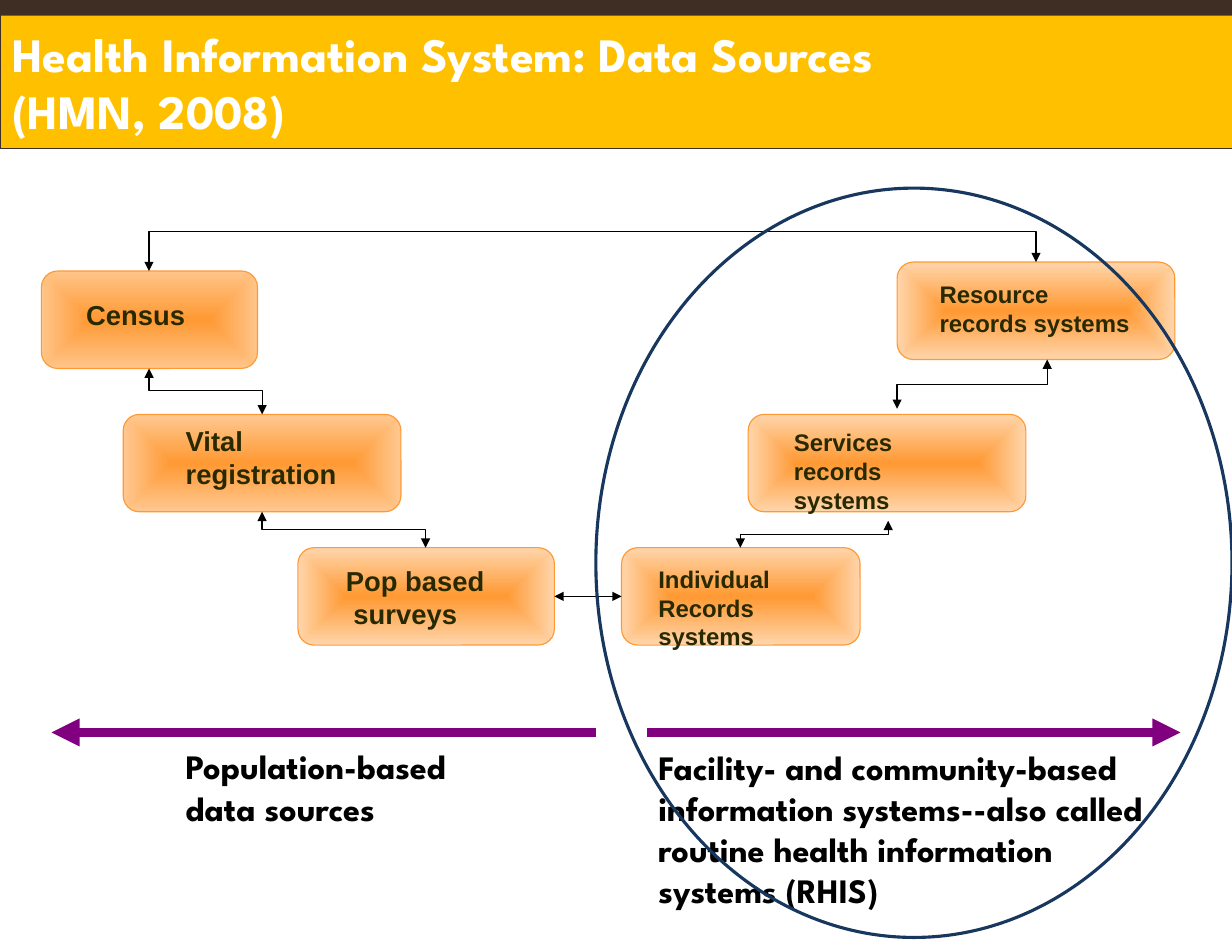
from lxml import etree
from pptx import Presentation
from pptx.dml.color import RGBColor
from pptx.enum.shapes import MSO_CONNECTOR, MSO_SHAPE
from pptx.enum.text import MSO_ANCHOR, MSO_AUTO_SIZE, PP_ALIGN
from pptx.oxml.ns import qn
from pptx.util import Inches, Pt

STRAIGHT, ELBOW = MSO_CONNECTOR.STRAIGHT, MSO_CONNECTOR.ELBOW
RECTANGLE, ROUNDED, OVAL = MSO_SHAPE.RECTANGLE, MSO_SHAPE.ROUNDED_RECTANGLE, MSO_SHAPE.OVAL
MIDDLE, TOP = MSO_ANCHOR.MIDDLE, MSO_ANCHOR.TOP
LEFT, NO_FIT = PP_ALIGN.LEFT, MSO_AUTO_SIZE.NONE

COLORS = {
    "bar": "3F2E24", "title": "FFC000", "white": "FFFFFF", "black": "000000",
    "orange": "FF9933", "peach": "FFD5AB", "apricot": "FFC891", "tan": "FFC58A",
    "label": "292900", "purple": "800080", "navy": "17375E",
}
HEADING_FONT = "League Spartan"
BOX_HEIGHT = 0.87
BOXES = [
    ("resource", (8.01, 2.34), 2.48, "peach", "Resource\nrecords systems", (8.29, 2.45, 1.98, 0.62), 15.4, False),
    ("services", (6.68, 3.7), 2.48, "peach", "Services records systems", (6.99, 3.77, 1.88, 0.88), 15.4, True),
    ("individual", (5.55, 4.89), 2.13, "peach", "Individual\nRecords systems", (5.78, 4.99, 1.74, 0.88), 15.4, True),
    ("surveys", (2.66, 4.89), 2.29, "peach", "Pop based\v surveys", (2.99, 4.99, 1.56, 0.69), 17.6, True),
    ("vital", (1.1, 3.7), 2.48, "apricot", "Vital \vregistration", (1.56, 3.74, 1.57, 0.69), 17.6, True),
    ("census", (0.37, 2.42), 1.93, "tan", "Census", (0.67, 2.61, 1.09, 0.4), 17.6, False),
]
ELBOWS = [
    ((1.33, 3.29), (2.34, 3.7), 3.49),
    ((2.34, 4.57), (3.8, 4.89), 4.73),
    ((7.93, 4.65), (6.61, 4.89), 4.77),
    ((8.01, 3.65), (9.35, 3.21), 3.43),
    ((1.33, 2.42), (9.25, 2.34), 2.07),
]


def color(name):
    return RGBColor.from_string(COLORS[name])


def write(box, text, size, font="Arial", ink="label", wrap=True, anchor=TOP):
    frame = box.text_frame
    frame.text = text
    frame.word_wrap = wrap
    frame.auto_size = NO_FIT
    frame.vertical_anchor = anchor
    for para in frame.paragraphs:
        para.alignment = LEFT
        for span in para.runs:
            span.font.size = Pt(size)
            span.font.name = font
            span.font.bold = True
            span.font.color.rgb = color(ink)


def add_text(shapes, place, text, size, **style):
    box = shapes.add_textbox(*map(Inches, place))
    write(box, text, size, **style)


def add_shape(shapes, kind, place, fill=None, line=None, width=0.75):
    shape = shapes.add_shape(kind, *map(Inches, place))
    shape.shadow.inherit = False
    if fill:
        shape.fill.solid()
        shape.fill.fore_color.rgb = color(fill)
    else:
        shape.fill.background()
    if line:
        shape.line.color.rgb = color(line)
        shape.line.width = Pt(width)
    else:
        shape.line.fill.background()
    return shape


def glow(shape, edge):
    shape.fill.gradient()
    for stop, position, name in zip(shape.fill.gradient_stops, (0, 1), ("orange", edge)):
        stop.position = position
        stop.color.rgb = color(name)
    gradient = shape._element.spPr.find(qn("a:gradFill"))
    gradient.remove(gradient.find(qn("a:lin")))
    route = etree.SubElement(gradient, qn("a:path"), {"path": "shape"})
    etree.SubElement(route, qn("a:fillToRect"), dict.fromkeys("ltrb", "50000"))


def add_source_box(page, corner, width, edge, text, text_place, size, wrap):
    group = page.shapes.add_group_shape()
    box = add_shape(group.shapes, ROUNDED, (*corner, width, BOX_HEIGHT), line="orange")
    glow(box, edge)
    add_text(group.shapes, text_place, text, size, wrap=wrap)
    return box


def add_line(page, start, end, ink="black", width=0.75, kind=STRAIGHT, ends=("headEnd", "tailEnd")):
    line = page.shapes.add_connector(kind, *map(Inches, (*start, *end)))
    line.line.color.rgb = color(ink)
    line.line.width = Pt(width)
    for end_name in ends:
        etree.SubElement(line.line._get_or_add_ln(), qn(f"a:{end_name}"), {"type": "triangle"})
    etree.SubElement(line._element.spPr, qn("a:effectLst"))
    return line


def add_elbow(page, start, end, bend):
    (x1, y1), (x2, y2) = start, end
    width, height = abs(y2 - y1), abs(x2 - x1)
    left, top = (x1 + x2 - width) / 2, (y1 + y2 - height) / 2
    line = add_line(page, (left, top), (left + width, top + height), kind=ELBOW)
    properties = line._element.spPr
    transform = properties.find(qn("a:xfrm"))
    turn = 270 if x2 > x1 else 90
    transform.set("rot", str(turn * 60000))
    if x2 > x1 and y2 > y1:
        transform.set("flipH", "1")
    adjustments = properties.find(qn("a:prstGeom")).find(qn("a:avLst"))
    share = round((bend - y1) / (y2 - y1) * 100000)
    etree.SubElement(adjustments, qn("a:gd"), {"name": "adj1", "fmla": f"val {share}"})


def add_title(page):
    bar = add_shape(page.shapes, RECTANGLE, (0, 0, 11, 1.33), fill="bar")
    page.shapes._spTree.insert(2, bar._element)
    title = page.shapes.title
    title.left, title.top, title.width, title.height = map(Inches, (0.01, 0.14, 10.99, 1.18))
    title.fill.solid()
    title.fill.fore_color.rgb = color("title")
    write(title, "Health Information System: Data Sources \v(HMN, 2008)", 30.8,
          font=HEADING_FONT, ink="white", anchor=MIDDLE)


def main():
    deck = Presentation()
    deck.slide_width, deck.slide_height = Inches(11), Inches(8.5)
    page = deck.slides.add_slide(deck.slide_layouts[5])
    add_title(page)

    boxes = {name: add_source_box(page, *details) for name, *details in BOXES}

    add_text(page.shapes, (1.56, 6.61, 2.86, 0.84), "Population-based\ndata sources", 22,
             font=HEADING_FONT, ink="black", wrap=False)
    add_text(page.shapes, (5.78, 6.61, 5.52, 1.58),
             "Facility- and community-based\ninformation systems--also called\n"
             "routine health information\nsystems (RHIS)", 22, font=HEADING_FONT, ink="black")

    for start, end in ((5.32, 0.46), (5.78, 10.54)):
        add_line(page, (start, 6.54), (end, 6.54), ink="purple", width=6, ends=("tailEnd",))
    for start, end, bend in ELBOWS:
        add_elbow(page, start, end, bend)
    link = add_line(page, (4.95, 5.33), (5.55, 5.33))
    link.begin_connect(boxes["surveys"], 3)
    link.end_connect(boxes["individual"], 1)

    add_shape(page.shapes, OVAL, (5.32, 1.68, 5.68, 6.69), line="navy", width=2)
    deck.save("out.pptx")


if __name__ == "__main__":
    main()
